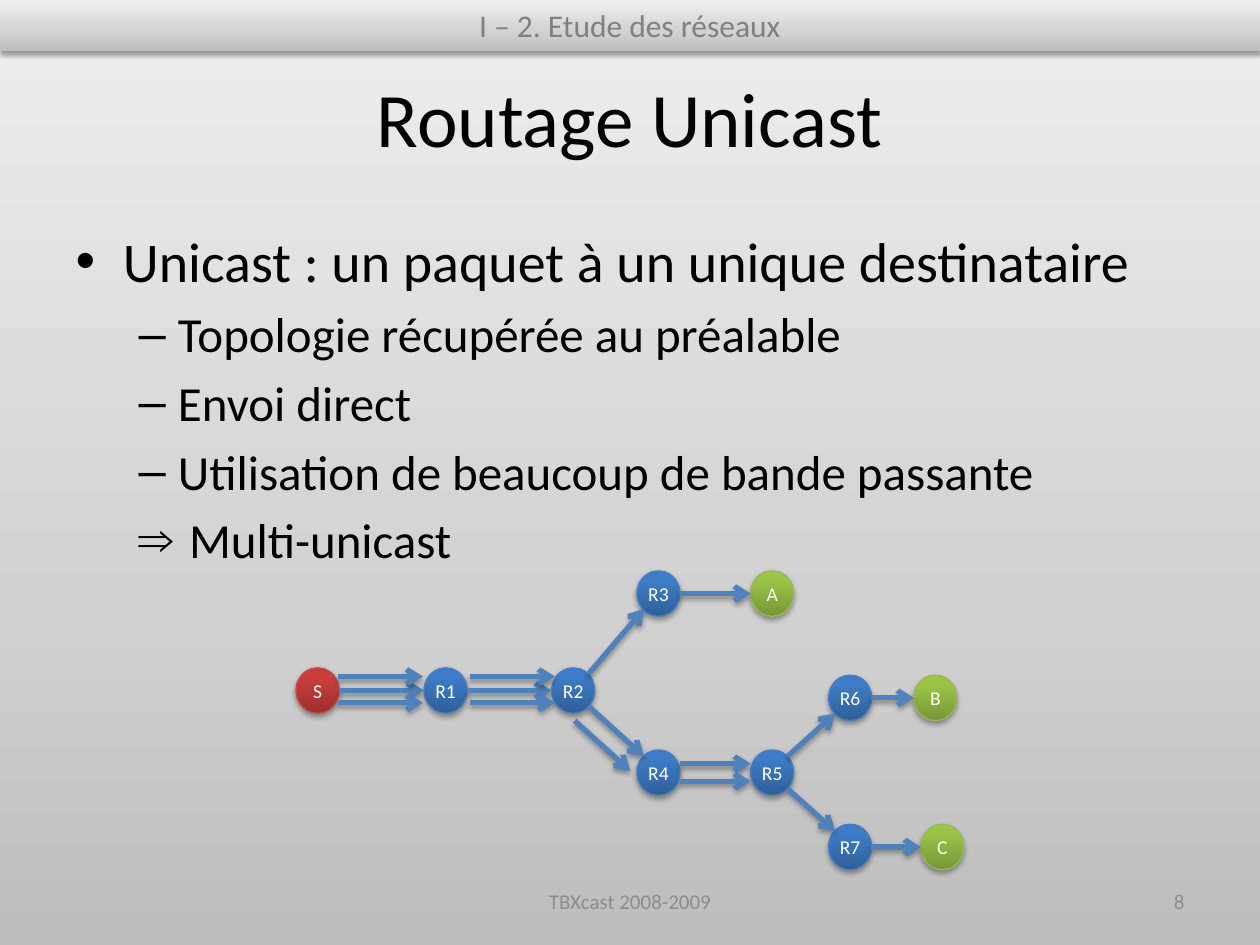
"""Build the slide on unicast routing with its network diagram."""
from pptx import Presentation
from pptx.dml.color import RGBColor
from pptx.enum.shapes import MSO_CONNECTOR, MSO_SHAPE
from pptx.enum.text import MSO_ANCHOR, PP_ALIGN
from pptx.oxml import parse_xml
from pptx.oxml.ns import nsdecls, qn
from pptx.util import Pt

COLORS = {"text": "000000", "header": "808080", "footer": "8C8C8C", "label": "FFFFFF",
          "arrow": "4F81BD", "source_line": "BF4C48", "router_line": "4B7EBC",
          "receiver_line": "98B955"}
GRADIENTS = {
    "grey": {0: "BDBDBD", 35: "D1D1D1", 100: "EEEEEE"},
    "source": {0: "9C2F2D", 80: "CB3E3A", 100: "CE3B37"},
    "router": {0: "2F5F99", 80: "3D7CC7", 100: "3A7CCB"},
    "receiver": {0: "779737", 80: "9BC348", 100: "9DC746"},
}


def paint(fill, element, name):
    fill.gradient()
    fill.gradient_angle = 90
    stops = element.find(".//" + qn("a:gsLst"))
    stops.clear()
    for position, color in GRADIENTS[name].items():
        stops.append(parse_xml(f'<a:gs {nsdecls("a")} pos="{position * 1000}">'
                               f'<a:srgbClr val="{color}"/></a:gs>'))


def cast_shadow(shape, alpha=35, distance=1.8):
    shape.element.spPr.append(parse_xml(
        f'<a:effectLst {nsdecls("a")}><a:outerShdw blurRad="{Pt(3.1)}" dist="{Pt(distance)}" '
        f'dir="5400000" rotWithShape="0"><a:srgbClr val="000000">'
        f'<a:alpha val="{alpha * 1000}"/></a:srgbClr></a:outerShdw></a:effectLst>'))


deck = Presentation()
deck.slide_width, deck.slide_height = Pt(720), Pt(540)
page = deck.slides.add_slide(deck.slide_layouts[1])
paint(page.background.fill, page.element, "grey")

title, body = page.placeholders
title.left, title.top, title.width, title.height = Pt(36), Pt(21.6), Pt(648), Pt(90)
body.left, body.top, body.width, body.height = Pt(36), Pt(126), Pt(648), Pt(356.4)
texts = [(title.text_frame.paragraphs[0], "Routage Unicast", 44, "text", PP_ALIGN.CENTER)]

points = [("Unicast : un paquet à un unique destinataire", 0),
          ("Topologie récupérée au préalable", 1),
          ("Envoi direct", 1),
          ("Utilisation de beaucoup de bande passante", 1),
          (" Multi-unicast", 1)]
for index, (wording, level) in enumerate(points):
    para = body.text_frame.add_paragraph() if index else body.text_frame.paragraphs[0]
    para.level = level
    texts.append((para, wording, 28 if level else 32, "text", PP_ALIGN.LEFT))
para.line_spacing = 1
para._p.get_or_add_pPr().append(parse_xml(f'<a:buChar {nsdecls("a")} char="⇒"/>'))

for wording, left, width, align in [("TBXcast 2008-2009", 246, 228, PP_ALIGN.CENTER),
                                    ("8", 516, 168, PP_ALIGN.RIGHT)]:
    box = page.shapes.add_textbox(Pt(left), Pt(500.5), Pt(width), Pt(28.75))
    box.text_frame.word_wrap = True
    box.text_frame.vertical_anchor = MSO_ANCHOR.MIDDLE
    texts.append((box.text_frame.paragraphs[0], wording, 12, "footer", align))

nodes = [("S", "source", 169.2, 381.6), ("R1", "router", 242.4, 381.6),
         ("R2", "router", 315.3, 381.6), ("R3", "router", 364, 326.2),
         ("R4", "router", 364, 428.5), ("R5", "router", 429, 428.5),
         ("R6", "router", 473.5, 385.8), ("R7", "router", 473.5, 471),
         ("A", "receiver", 429, 326.2), ("B", "receiver", 522.2, 385.8),
         ("C", "receiver", 526.2, 471)]
for label, role, left, top in nodes:
    node = page.shapes.add_shape(MSO_SHAPE.OVAL, Pt(left), Pt(top), Pt(24.6), Pt(26))
    paint(node.fill, node.element, role)
    node.line.color.rgb = RGBColor.from_string(COLORS[role + "_line"])
    node.line.width = Pt(0.75)
    cast_shadow(node)
    frame = node.text_frame
    frame.margin_left = frame.margin_right = 0
    frame.word_wrap = False
    frame.vertical_anchor = MSO_ANCHOR.MIDDLE
    texts.append((frame.paragraphs[0], label, 11.2, "label", PP_ALIGN.CENTER))

arrows = [(193.7, 394.6, 242.4, 394.6), (267, 394.6, 315.3, 394.6),
          (336.2, 385.2, 368, 348), (388.4, 339.2, 429, 339.2),
          (388.6, 436.4, 429, 436.4), (388.6, 446.4, 429, 446.4),
          (450, 432.2, 477.2, 407.8), (450, 450.7, 477.2, 475),
          (497.8, 398.8, 522.2, 398.8), (497.8, 484, 526.2, 484),
          (336.2, 403.4, 368, 432.2), (328.4, 411.8, 360.2, 440.6)]
arrows += [(left, y, left + 48.7, y) for left in (193, 268.4) for y in (386.6, 401.6)]
for x1, y1, x2, y2 in arrows:
    arrow = page.shapes.add_connector(MSO_CONNECTOR.STRAIGHT, Pt(x1), Pt(y1), Pt(x2), Pt(y2))
    arrow.line.color.rgb = RGBColor.from_string(COLORS["arrow"])
    arrow.line.width = Pt(3)
    arrow.line._get_or_add_ln().append(parse_xml(f'<a:tailEnd {nsdecls("a")} type="arrow"/>'))
    cast_shadow(arrow)

header = page.shapes.add_shape(MSO_SHAPE.RECTANGLE, 0, 0, Pt(720), Pt(29))
paint(header.fill, header.element, "grey")
header.line.fill.background()
cast_shadow(header, 38, 1.6)
texts.append((header.text_frame.paragraphs[0], "I – 2. Etude des réseaux", 18, "header",
              PP_ALIGN.CENTER))

for para, wording, size, color, align in texts:
    para.alignment = align
    span = para.add_run()
    span.text = wording
    span.font.name = "Calibri"
    span.font.size = Pt(size)
    span.font.color.rgb = RGBColor.from_string(COLORS[color])

deck.save("out.pptx")
